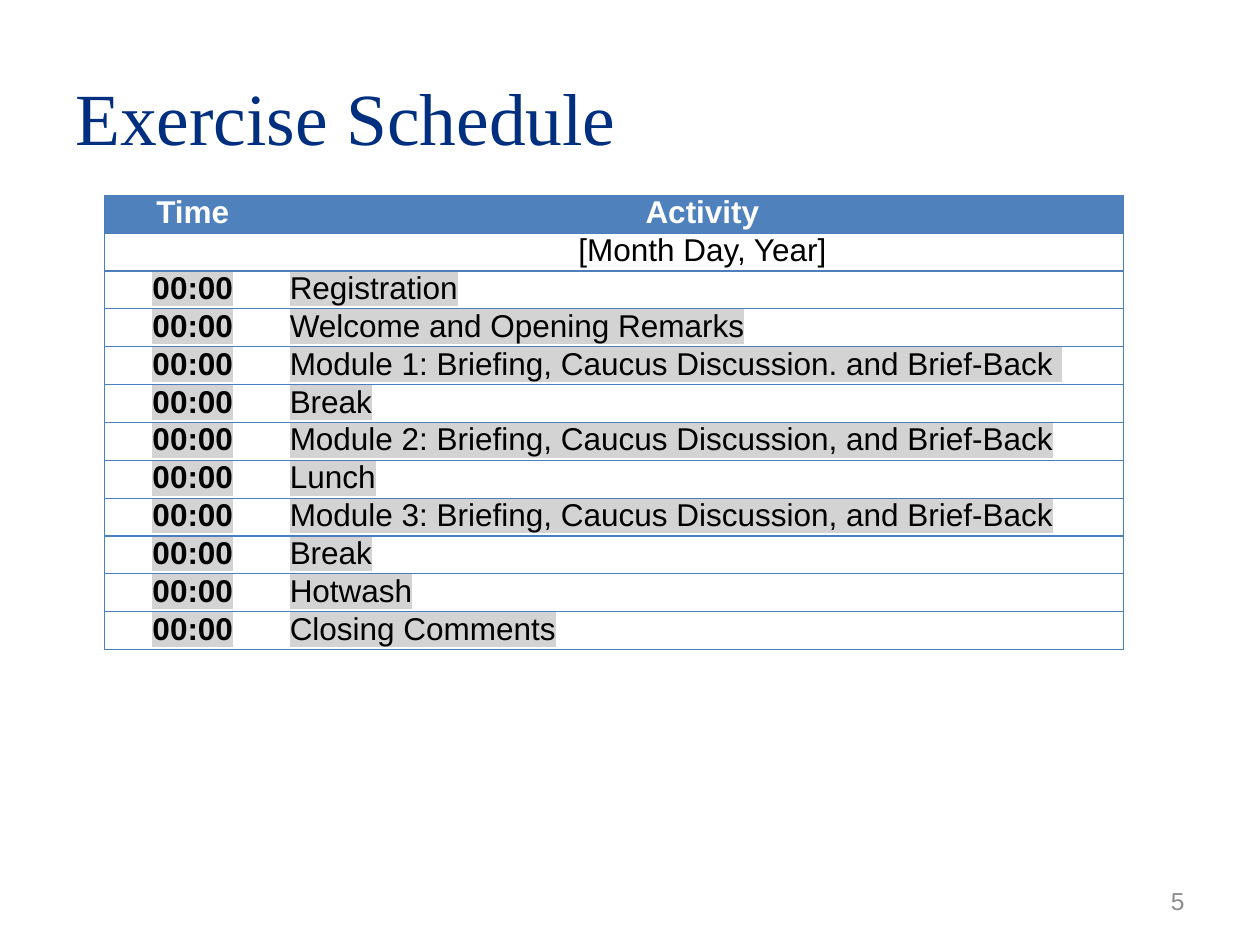
from lxml.etree import SubElement as Sub
from pptx import Presentation
from pptx.dml.color import RGBColor as RGB
from pptx.enum.text import MSO_ANCHOR as Anchor, PP_ALIGN as Align
from pptx.oxml.ns import qn
from pptx.util import Inches, Pt

TITLE = "Exercise Schedule"
PAGE = "5"
HEAD = ("Time", "Activity")
DATE = ("", "[Month Day, Year]")
ITEMS = [
    "Registration",
    "Welcome and Opening Remarks",
    "Module 1: Briefing, Caucus Discussion. and Brief-Back ",
    "Break",
    "Module 2: Briefing, Caucus Discussion, and Brief-Back",
    "Lunch",
    "Module 3: Briefing, Caucus Discussion, and Brief-Back",
    "Break",
    "Hotwash",
    "Closing Comments",
]
ROWS = [HEAD, DATE] + [("00:00", item) for item in ITEMS]
COLS = (1.4, 6.69)
ROW_H = 0.28

NAVY = RGB(0x00, 0x2F, 0x80)
BLUE = RGB(0x4F, 0x81, 0xBD)
EDGE = RGB(0x4B, 0x7E, 0xBC)
GREY = RGB(0x8C, 0x8C, 0x8C)
MARK = RGB(0xD3, 0xD3, 0xD3)
WHITE = RGB(0xFF, 0xFF, 0xFF)
BLACK = RGB(0, 0, 0)


def style(run, size, color, face="Arial", bold=False):
    font = run.font
    font.size, font.name, font.bold = Pt(size), face, bold
    font.color.rgb = color


def label(slide, box, text, align, *look):
    frame = slide.shapes.add_textbox(*map(Inches, box)).text_frame
    frame.word_wrap = True
    frame.vertical_anchor = Anchor.MIDDLE
    frame.text = text
    para = frame.paragraphs[0]
    para.alignment = align
    style(para.runs[0], *look)


def highlight(run):
    props = run.font._element
    mark = Sub(props, qn("a:highlight"))
    Sub(mark, qn("a:srgbClr"), val=str(MARK))
    props.find(qn("a:solidFill")).addnext(mark)


def border(cell, col):
    props = cell._tc.get_or_add_tcPr()
    for spot, side in enumerate("LRTB"):
        line = Sub(props, qn("a:ln" + side), w=str(Pt(0.75)))
        if (col, side) in ((0, "R"), (1, "L")):
            Sub(line, qn("a:noFill"))
        else:
            fill = Sub(line, qn("a:solidFill"))
            Sub(fill, qn("a:srgbClr"), val=str(EDGE))
        props.insert(spot, line)


def fill_cell(cell, row, col, text):
    cell.margin_left = cell.margin_right = Inches(0.07)
    cell.margin_top = cell.margin_bottom = 0
    if row == 0:
        cell.fill.solid()
        cell.fill.fore_color.rgb = BLUE
    else:
        cell.fill.background()
    border(cell, col)
    para = cell.text_frame.paragraphs[0]
    para.space_before = para.space_after = Pt(2)
    para.alignment = Align.CENTER if row < 2 or col == 0 else Align.LEFT
    run = para.add_run()
    run.text = text
    style(run, 18, BLACK if row else WHITE, bold=row == 0 or col == 0)
    if row > 1:
        highlight(run)


def main():
    deck = Presentation()
    deck.slide_width, deck.slide_height = Inches(10), Inches(7.5)
    slide = deck.slides.add_slide(deck.slide_layouts[6])
    label(slide, (0.5, 0.3, 9, 1.25), TITLE, Align.LEFT, 42, NAVY, "Times New Roman")
    label(slide, (7.17, 6.95, 2.33, 0.4), PAGE, Align.RIGHT, 14, GREY)

    area = map(Inches, (0.83, 1.55, sum(COLS), ROW_H * len(ROWS)))
    table = slide.shapes.add_table(len(ROWS), len(COLS), *area).table
    table.horz_banding = False
    for col, width in enumerate(COLS):
        table.columns[col].width = Inches(width)
    for row, texts in enumerate(ROWS):
        table.rows[row].height = Inches(ROW_H)
        for col, text in enumerate(texts):
            fill_cell(table.cell(row, col), row, col, text)
    deck.save("out.pptx")


if __name__ == "__main__":
    main()
